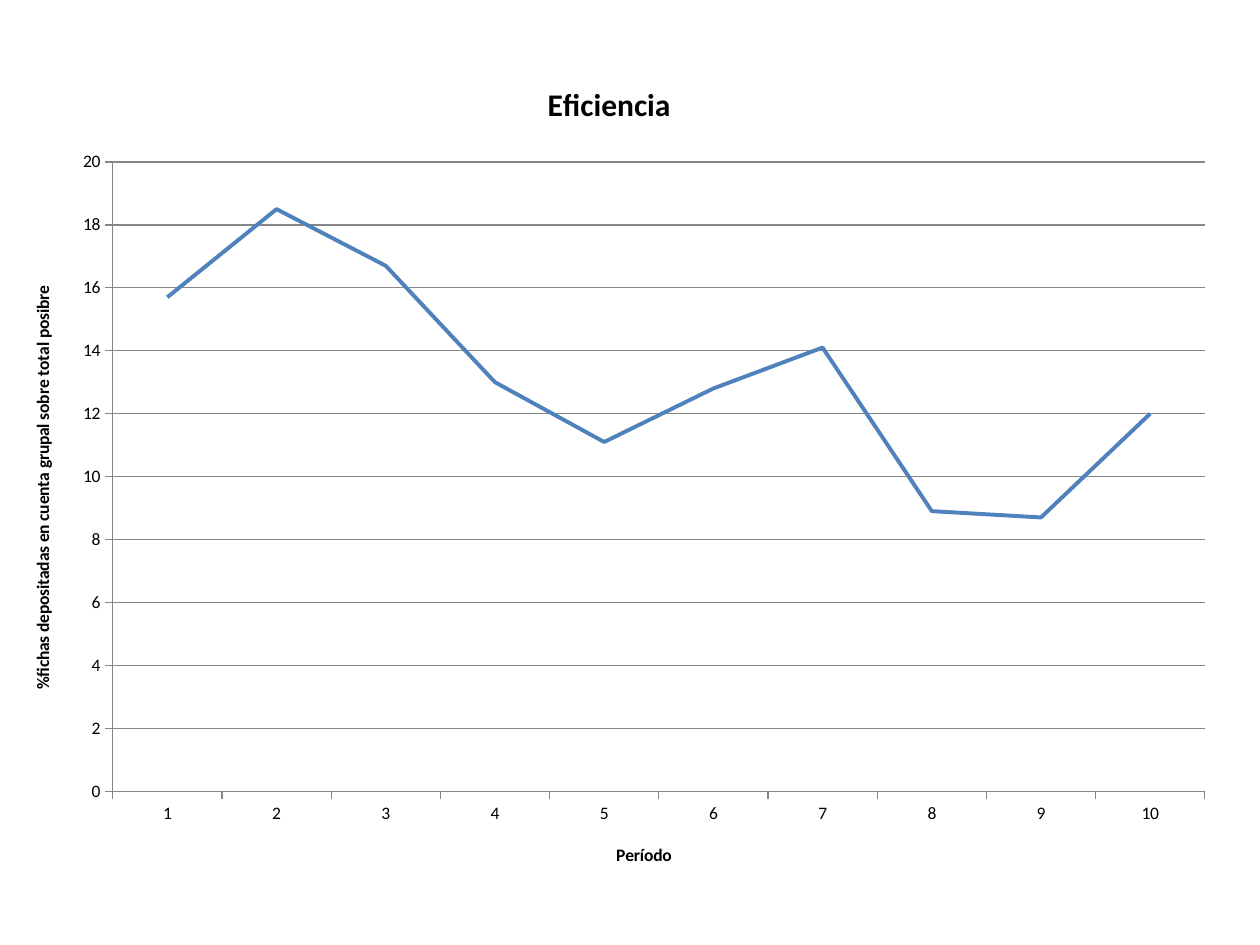
import pptx
import pptx.chart.data
import pptx.dml.color
import pptx.enum.chart
import pptx.oxml
import pptx.oxml.ns
import pptx.util
from pptx.util import Inches

COLORS = {"line": "4F81BD", "axis": "868686", "text": "000000"}
EFFICIENCY = [15.7, 18.5, 16.7, 13, 11.1, 12.8, 14.1, 8.9, 8.7, 12]
PLOT_AREA = {"x": 0.1, "y": 0.13, "w": 0.88, "h": 0.75}


def rgb(name):
    return pptx.dml.color.RGBColor.from_string(COLORS[name])


def add_title(owner, text, size):
    """Give a chart or an axis a bold title."""
    owner.has_title = True
    title = owner.chart_title if hasattr(owner, "chart_title") else owner.axis_title
    run = title.text_frame.paragraphs[0].add_run()
    run.text = text
    run.font.name = "Calibri"
    run.font.size = pptx.util.Pt(size)
    run.font.bold = True
    run.font.color.rgb = rgb("text")


presentation = pptx.Presentation()
presentation.slide_width = Inches(10)
presentation.slide_height = Inches(7.5)
slide = presentation.slides.add_slide(presentation.slide_layouts[6])

chart_data = pptx.chart.data.CategoryChartData()
chart_data.categories = [str(period) for period in range(1, 11)]
chart_data.add_series("Series 1", EFFICIENCY)
chart = slide.shapes.add_chart(
    pptx.enum.chart.XL_CHART_TYPE.LINE,
    Inches(-0.09), Inches(0.42), Inches(9.85), Inches(6.66), chart_data,
).chart
chart.has_legend = False
chart.font.name = "Calibri"
chart.font.size = pptx.util.Pt(10)
chart.font.color.rgb = rgb("text")
add_title(chart, "Eficiencia", 18)

series = chart.plots[0].series[0]
series.smooth = False
series.marker.style = pptx.enum.chart.XL_MARKER_STYLE.NONE
series.format.line.color.rgb = rgb("line")
series.format.line.width = pptx.util.Pt(2.25)

value_axis = chart.value_axis
value_axis.minimum_scale = 0
value_axis.maximum_scale = 20
value_axis.major_unit = 2
value_axis.has_major_gridlines = True
value_axis.tick_labels.number_format = "0"
value_axis.tick_labels.number_format_is_linked = False

axis_titles = [
    (chart.category_axis, "Período"),
    (value_axis, "%fichas depositadas en cuenta grupal sobre total posibre"),
]
for axis, text in axis_titles:
    add_title(axis, text, 10)
    axis.major_tick_mark = pptx.enum.chart.XL_TICK_MARK.OUTSIDE
    axis.minor_tick_mark = pptx.enum.chart.XL_TICK_MARK.NONE
for line in (
    chart.category_axis.format.line,
    value_axis.format.line,
    value_axis.major_gridlines.format.line,
):
    line.color.rgb = rgb("axis")
    line.width = pptx.util.Pt(0.75)

# A fixed inner plot area needs XML.
plot_area = chart.plots[0]._element.getparent()
for old_layout in plot_area.findall(pptx.oxml.ns.qn("c:layout")):
    plot_area.remove(old_layout)
fractions = "".join(f'<c:{key} val="{value}"/>' for key, value in PLOT_AREA.items())
plot_area.insert(0, pptx.oxml.parse_xml(
    f'<c:layout {pptx.oxml.ns.nsdecls("c")}><c:manualLayout>'
    '<c:layoutTarget val="inner"/><c:xMode val="edge"/><c:yMode val="edge"/>'
    f"{fractions}</c:manualLayout></c:layout>"
))

presentation.save("out.pptx")
